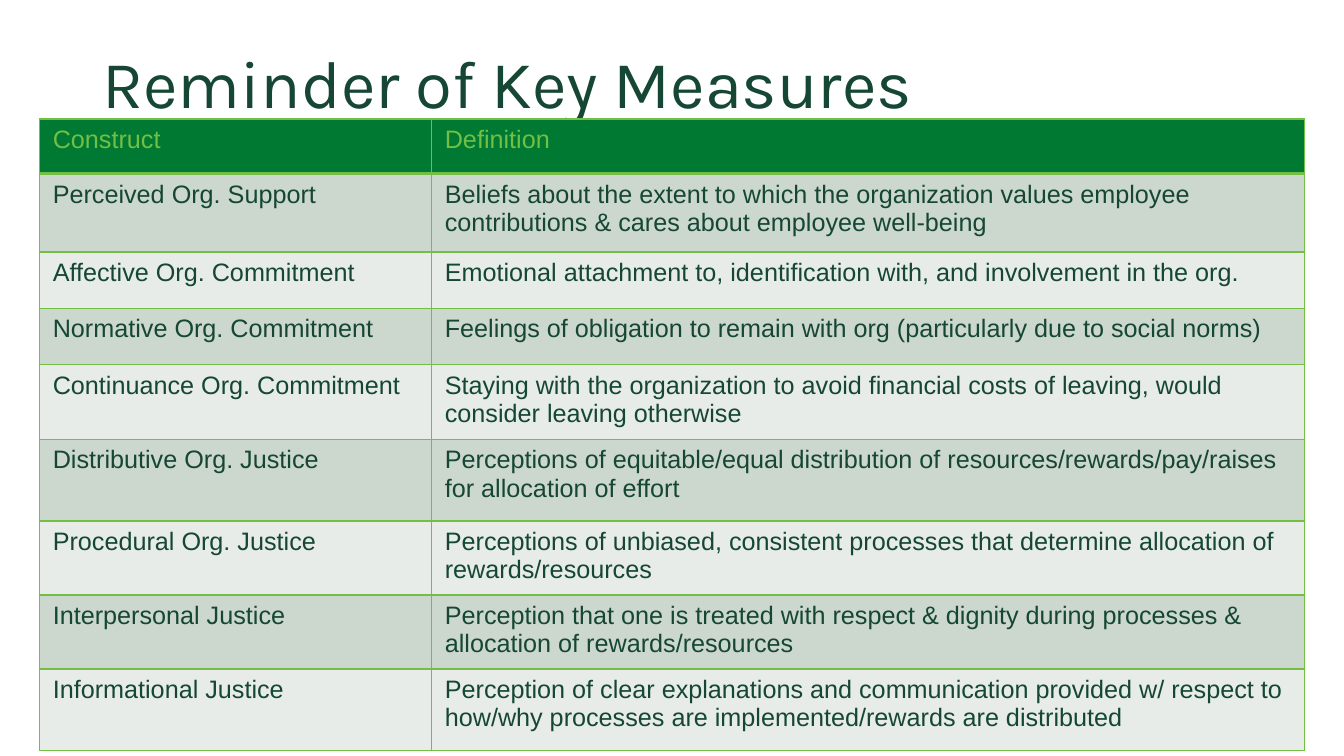
from lxml import etree
from pptx import Presentation
from pptx.dml.color import RGBColor
from pptx.enum.text import MSO_ANCHOR as Anchor
from pptx.oxml import parse_xml
from pptx.oxml.ns import nsdecls
from pptx.util import Cm, Pt

LIME, GREEN, DARK = "72BF44", "007A33", "154734"
BANDS = ["E7ECE8", "CCD7CE"]


def color(code):
    return RGBColor.from_string(code)


def write(para, text, size, face, code):
    run = para.add_run()
    run.text = text
    run.font.size = Pt(size)
    run.font.name = face
    run.font.bold = False
    run.font.color.rgb = color(code)


prs = Presentation()
prs.slide_width, prs.slide_height = Cm(33.87), Cm(19.05)
slide = prs.slides.add_slide(prs.slide_layouts[6])

# Title
box = slide.shapes.add_textbox(Cm(2.33), Cm(0.84), Cm(29.21), Cm(2.67))
frame = box.text_frame
frame.word_wrap = True
frame.vertical_anchor = Anchor.MIDDLE
frame.paragraphs[0].line_spacing = 0.9
write(frame.paragraphs[0], "Reminder of Key Measures", 48, "Karla", DARK)

# Row height in cm, construct, definition
rows = [
    (1.37, "Construct", "Definition"),
    (1.98, "Perceived Org. Support",
     "Beliefs about the extent to which the organization values employee "
     "contributions & cares about employee well-being"),
    (1.42, "Affective Org. Commitment",
     "Emotional attachment to, identification with, and involvement in the org."),
    (1.42, "Normative Org. Commitment",
     "Feelings of obligation to remain with org (particularly due to social norms)"),
    (1.88, "Continuance Org. Commitment",
     "Staying with the organization to avoid financial costs of leaving, "
     "would consider leaving otherwise"),
    (2.06, "Distributive Org. Justice",
     "Perceptions of equitable/equal distribution of resources/rewards/pay/raises "
     "for allocation of effort"),
    (1.8, "Procedural Org. Justice",
     "Perceptions of unbiased, consistent processes that determine allocation of "
     "rewards/resources"),
    (1.84, "Interpersonal Justice",
     "Perception that one is treated with respect & dignity during processes & "
     "allocation of rewards/resources"),
    (2.06, "Informational Justice",
     "Perception of clear explanations and communication provided w/ respect to "
     "how/why processes are implemented/rewards are distributed"),
]

# Table of measures
high = sum(row[0] for row in rows)
table = slide.shapes.add_table(
    len(rows), 2, Cm(1), Cm(3), Cm(31.88), Cm(high)).table
table.first_row = table.horz_banding = False
table.columns[0].width, table.columns[1].width = Cm(9.88), Cm(22)

for i, (tall, *texts) in enumerate(rows):
    table.rows[i].height = Cm(tall)
    for j, text in enumerate(texts):
        cell = table.cell(i, j)
        cell.margin_left = cell.margin_right = Cm(0.33)
        cell.margin_top = cell.margin_bottom = Cm(0.17)
        # Borders come before the fill in the cell's XML
        props = cell._tc.get_or_add_tcPr()
        for side in "LRTB":
            wide = Pt(3 if i == 0 and side == "B" else 1)
            props.append(parse_xml(
                f'<a:ln{side} {nsdecls("a")} w="{wide}"><a:solidFill>'
                f'<a:srgbClr val="{LIME}"/></a:solidFill></a:ln{side}>'))
        cell.fill.solid()
        cell.fill.fore_color.rgb = color(BANDS[i % 2] if i else GREEN)
        write(cell.text_frame.paragraphs[0], text, 18, "Arial",
              DARK if i else LIME)

prs.save("out.pptx")
